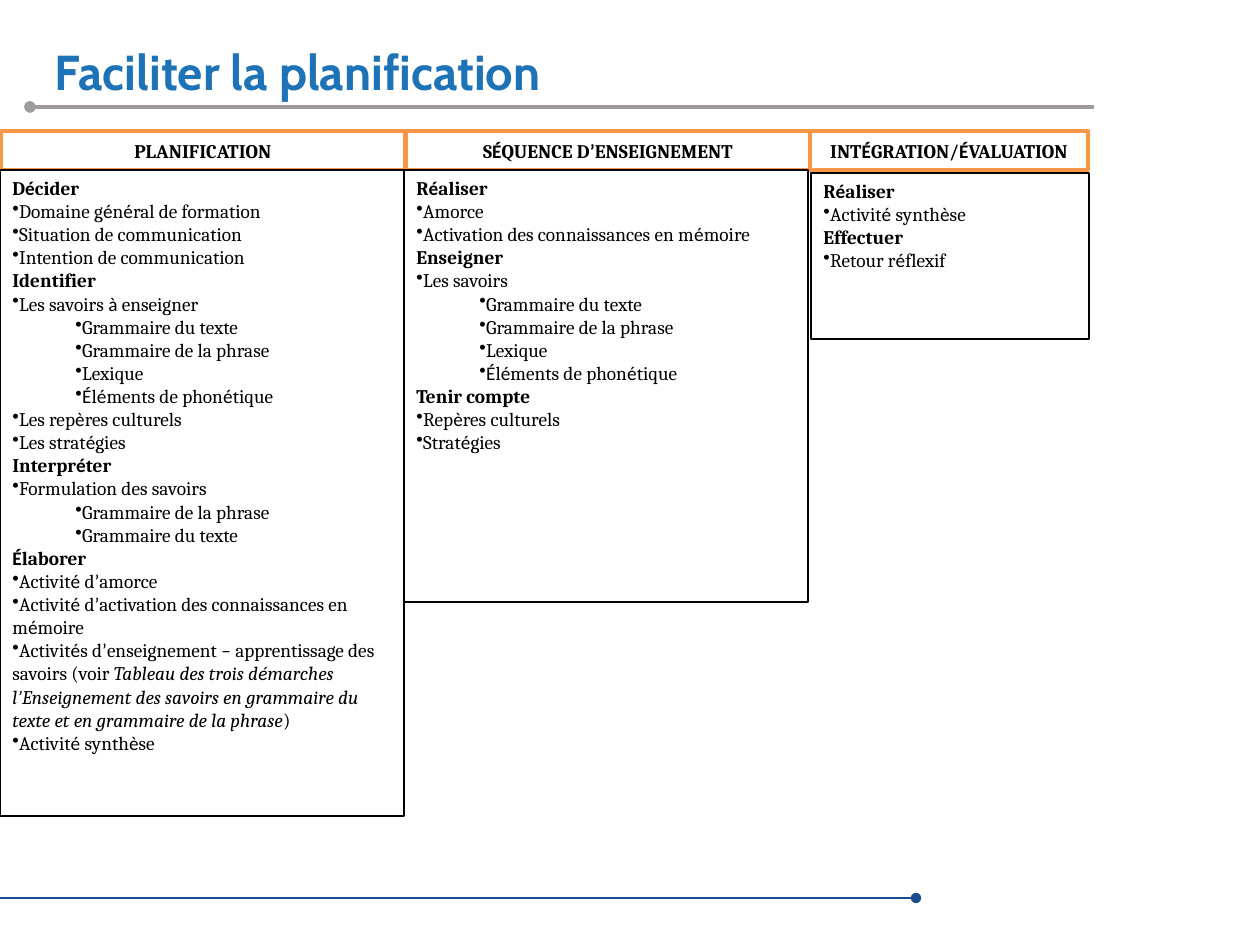
from itertools import groupby
from lxml import etree
from pptx import Presentation
from pptx.dml.color import RGBColor
from pptx.enum.shapes import MSO_CONNECTOR, MSO_SHAPE
from pptx.enum.text import MSO_ANCHOR, MSO_AUTO_SIZE, PP_ALIGN
from pptx.oxml.ns import qn
from pptx.util import Pt

RECT = MSO_SHAPE.RECTANGLE
LINE = MSO_CONNECTOR.STRAIGHT
LEFT, CENTER = PP_ALIGN.LEFT, PP_ALIGN.CENTER
TOP, MIDDLE = MSO_ANCHOR.TOP, MSO_ANCHOR.MIDDLE
SCALE = 914400 / 126

TITLE = "Faciliter la planification"
HEADS = [
    ("PLANIFICATION", 1, 404),
    ("SÉQUENCE D’ENSEIGNEMENT", 406, 404),
    ("INTÉGRATION/ÉVALUATION", 810, 278),
]
# Levels: 0 heading, 1 bullet, 2 indented bullet; "*" switches italics.
PLAN = [
    (0, "Décider"),
    (1, "Domaine général de formation"),
    (1, "Situation de communication"),
    (1, "Intention de communication"),
    (0, "Identifier"),
    (1, "Les savoirs à enseigner"),
    (2, "Grammaire du texte"),
    (2, "Grammaire de la phrase"),
    (2, "Lexique"),
    (2, "Éléments de phonétique"),
    (1, "Les repères culturels"),
    (1, "Les stratégies"),
    (0, "Interpréter"),
    (1, "Formulation des savoirs"),
    (2, "Grammaire de la phrase"),
    (2, "Grammaire du texte"),
    (0, "Élaborer"),
    (1, "Activité d’amorce"),
    (1, "Activité d’activation des connaissances en mémoire"),
    (1, "Activités d’enseignement – apprentissage des savoirs (voir "
        "*Tableau des trois démarches l’Enseignement des savoirs en "
        "grammaire du texte et en grammaire de la phrase*)"),
    (1, "Activité synthèse"),
]
TEACH = [
    (0, "Réaliser"),
    (1, "Amorce"),
    (1, "Activation des connaissances en mémoire"),
    (0, "Enseigner"),
    (1, "Les savoirs"),
    (2, "Grammaire du texte"),
    (2, "Grammaire de la phrase"),
    (2, "Lexique"),
    (2, "Éléments de phonétique"),
    (0, "Tenir compte"),
    (1, "Repères culturels"),
    (1, "Stratégies"),
]
REVIEW = [
    (0, "Réaliser"),
    (1, "Activité synthèse"),
    (0, "Effectuer"),
    (1, "Retour réflexif"),
]
BODIES = [
    (PLAN, (0, 170, 404, 646)),
    (TEACH, (404, 170, 404, 432)),
    (REVIEW, (811, 173, 278, 166)),
]
RULES = [
    (-13, 916, 898, "174C8D", 1.5, "a:tailEnd"),
    (30, 1094, 107, "9E9B9A", 2.25, "a:headEnd"),
]


def px(*nums):
    return [round(n * SCALE) for n in nums]


def color(code):
    return RGBColor.from_string(code)


def add_rule(slide, left, right, y, code, width, end):
    rule = slide.shapes.add_connector(LINE, *px(left, y, right, y))
    rule.line.color.rgb = color(code)
    rule.line.width = Pt(width)
    etree.SubElement(rule.line._get_or_add_ln(), qn(end), type="oval")
    etree.SubElement(rule._element.spPr, qn("a:effectLst"))


def add_box(slide, area, code, width, anchor):
    box = slide.shapes.add_shape(RECT, *px(*area))
    box.shadow.inherit = False
    box.fill.solid()
    box.fill.fore_color.rgb = color("FFFFFF")
    box.line.color.rgb = color(code)
    box.line.width = Pt(width)
    frame = box.text_frame
    frame.word_wrap = True
    frame.vertical_anchor = anchor
    return frame


def write(para, text, level, align):
    para.alignment = align
    if level:
        props = para._p.get_or_add_pPr()
        props.set("marL", str(px(63 * (level - 1))[0]))
        props.set("indent", "0")
        etree.SubElement(props, qn("a:buChar"), char="•")
    if level == 2:
        para.level = 1
    para.font.size = Pt(11)
    para.font.bold = level == 0
    para.font.color.rgb = color("000000")
    para.font.name = "Cambria"
    for n, part in enumerate(text.split("*")):
        for plain, chars in groupby(part, str.isascii):
            run = para.add_run()
            run.text = "".join(chars)
            run.font.color.rgb = color("000000")
            if not plain:
                run.font.name = "Calibri"
            if n % 2:
                run.font.italic = True


def fill_box(frame, items, align):
    for n, (level, text) in enumerate(items):
        para = frame.add_paragraph() if n else frame.paragraphs[0]
        write(para, text, level, align)


def add_title(slide):
    title = slide.shapes.title
    title.left, title.top, title.width, title.height = px(42, 0, 1037, 141)
    frame = title.text_frame
    frame.text = TITLE
    frame.auto_size = MSO_AUTO_SIZE.NONE
    frame.vertical_anchor = MIDDLE
    para = frame.paragraphs[0]
    para.alignment = LEFT
    para.font.name = "Cabin"
    para.font.size = Pt(28)
    para.font.bold = True
    para.font.color.rgb = color("1D73B6")


def main():
    deck = Presentation()
    deck.slide_width, deck.slide_height = px(1260, 945)
    slide = deck.slides.add_slide(deck.slide_layouts[5])
    add_title(slide)
    for rule in RULES:
        add_rule(slide, *rule)
    for text, left, width in HEADS:
        frame = add_box(slide, (left, 131, width, 39), "F79646", 2, MIDDLE)
        fill_box(frame, [(0, text)], CENTER)
    for items, area in BODIES:
        frame = add_box(slide, area, "000000", 0.75, TOP)
        fill_box(frame, items, LEFT)
    deck.save("out.pptx")


if __name__ == "__main__":
    main()
